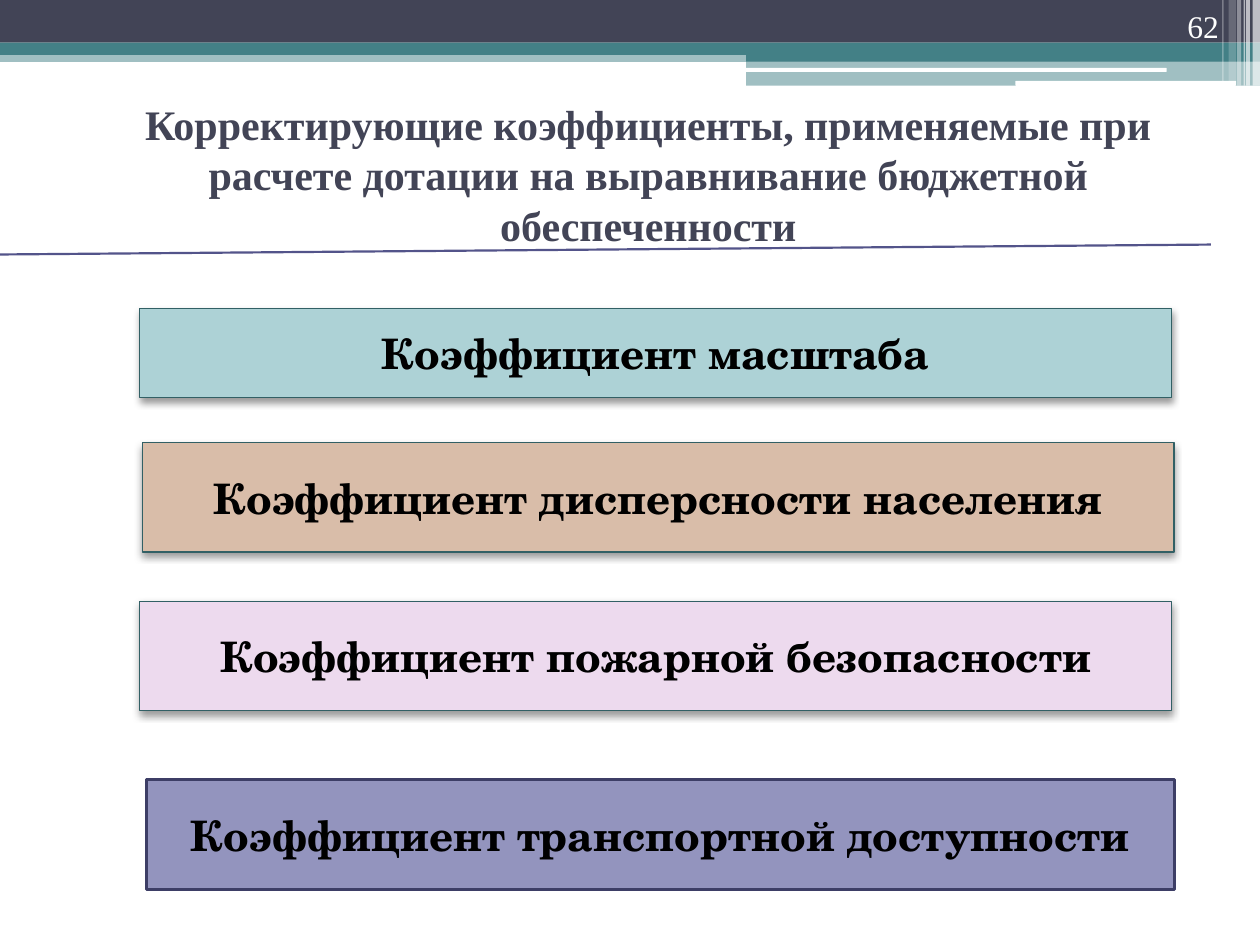
from dataclasses import dataclass

from lxml.etree import SubElement
from pptx import Presentation
from pptx.dml.color import RGBColor
from pptx.enum.shapes import MSO_CONNECTOR, MSO_SHAPE
from pptx.enum.text import MSO_ANCHOR, PP_ALIGN
from pptx.oxml.ns import qn
from pptx.util import Cm, Pt


@dataclass(frozen=True)
class Theme:
    dark: str = "424456"
    teal: str = "438086"
    white: str = "FFFFFF"
    black: str = "000000"
    rule: str = "53548A"
    teal_edge: str = "326065"
    violet_edge: str = "3D3E66"
    aqua: str = "ADD2D6"
    sand: str = "D9BDA9"
    pink: str = "EDDAEE"
    violet: str = "9394BE"
    text_font: str = "Times New Roman"
    box_font: str = "TeX Gyre Schola"
    large: int = 24
    small: int = 18


class SlideBuilder:
    def __init__(self, slide, theme):
        self.slide = slide
        self.theme = theme

    def band(self, left, top, width, height, color, opacity=100, rounded=False):
        kind = MSO_SHAPE.ROUNDED_RECTANGLE if rounded else MSO_SHAPE.RECTANGLE
        shape = self.slide.shapes.add_shape(
            kind, Cm(left), Cm(top), Cm(width), Cm(height))
        shape.shadow.inherit = False
        shape.fill.solid()
        shape.fill.fore_color.rgb = RGBColor.from_string(color)
        shape.line.fill.background()
        if opacity < 100:
            solid_fill = shape._element.spPr.find(qn("a:solidFill"))
            fill_color = solid_fill.find(qn("a:srgbClr"))
            SubElement(fill_color, qn("a:alpha"), val=str(opacity * 1000))
        return shape

    def label(self, shape, text, font, size, color, bold=True,
              align=PP_ALIGN.CENTER, anchor=MSO_ANCHOR.MIDDLE):
        frame = shape.text_frame
        frame.word_wrap = True
        frame.vertical_anchor = anchor
        frame.text = text
        paragraph = frame.paragraphs[0]
        paragraph.alignment = align
        run_font = paragraph.runs[0].font
        run_font.name = font
        run_font.size = Pt(size)
        run_font.bold = bold
        run_font.color.rgb = RGBColor.from_string(color)

    def text(self, left, top, width, height, text, **style):
        box = self.slide.shapes.add_textbox(
            Cm(left), Cm(top), Cm(width), Cm(height))
        self.label(box, text, self.theme.text_font, **style)

    def box(self, left, top, width, height, text, fill, edge, edge_width, shadow):
        shape = self.band(left, top, width, height, fill)
        shape.line.color.rgb = RGBColor.from_string(edge)
        shape.line.width = Pt(edge_width)
        if shadow:
            self.drop_shadow(shape)
        self.label(shape, text, self.theme.box_font, self.theme.large,
                   self.theme.black)

    def drop_shadow(self, shape):
        effects = shape._element.spPr.find(qn("a:effectLst"))
        outer = SubElement(effects, qn("a:outerShdw"), blurRad=str(int(Pt(4.1))),
                           dist=str(int(Pt(2))), dir="5400000", rotWithShape="0")
        color = SubElement(outer, qn("a:srgbClr"), val=self.theme.black)
        SubElement(color, qn("a:alpha"), val="40000")

    def line(self, x1, y1, x2, y2, color, width):
        connector = self.slide.shapes.add_connector(
            MSO_CONNECTOR.STRAIGHT, Cm(x1), Cm(y1), Cm(x2), Cm(y2))
        connector.line.color.rgb = RGBColor.from_string(color)
        connector.line.width = Pt(width)
        SubElement(connector._element.spPr, qn("a:effectLst"))


def main():
    presentation = Presentation()
    presentation.slide_width = Cm(25.4)
    presentation.slide_height = Cm(19.05)
    slide = presentation.slides.add_slide(presentation.slide_layouts[6])
    theme = Theme()
    builder = SlideBuilder(slide, theme)

    # Header bands
    builder.band(0, 1.02, 25.4, 0.23, theme.teal, 50)
    builder.band(0, 0, 25.4, 0.86, theme.dark)
    builder.band(0, 0.86, 25.4, 0.25, theme.teal)
    builder.band(15.04, 0.99, 10.36, 0.25, theme.teal)
    builder.band(15.04, 1.22, 10.36, 0.51, theme.teal, 50)
    builder.band(15.01, 1.37, 8.51, 0.08, theme.white, rounded=True)
    builder.band(20.47, 1.63, 4.45, 0.1, theme.white, rounded=True)

    # Vertical stripes at the right edge: left, width, height, opacity
    for left, width, height, opacity in (
            (25.25, 0.15, 1.73, 65), (25.12, 0.08, 1.73, 65),
            (25.07, 0.03, 1.73, 60), (24.94, 0.08, 1.73, 40),
            (24.77, 0.15, 1.63, 20), (24.64, 0.03, 1.63, 30)):
        builder.band(left, 0, width, height, theme.white, opacity)

    # Title, rule and slide number
    builder.text(2.67, 1.32, 20.8, 4.37,
                 "Корректирующие коэффициенты, применяемые при расчете "
                 "дотации на выравнивание бюджетной обеспеченности",
                 size=theme.large, color=theme.dark)
    builder.line(0, 5.13, 24.41, 4.93, theme.rule, 1.25)
    builder.text(22.71, 0, 2.11, 1.02, "62", size=theme.small,
                 color=theme.white, bold=False, align=PP_ALIGN.RIGHT,
                 anchor=MSO_ANCHOR.BOTTOM)

    # Coefficient boxes
    teal_style = (theme.teal_edge, 0.75, True)
    violet_style = (theme.violet_edge, 1.5, False)
    for left, top, width, height, name, fill, style in (
            (2.82, 6.22, 20.8, 1.8, "масштаба", theme.aqua, teal_style),
            (2.87, 8.92, 20.8, 2.21, "дисперсности населения",
             theme.sand, teal_style),
            (2.82, 12.12, 20.8, 2.21, "пожарной безопасности",
             theme.pink, teal_style),
            (2.95, 15.72, 20.73, 2.21, "транспортной доступности",
             theme.violet, violet_style)):
        builder.box(left, top, width, height, f"Коэффициент {name}", fill, *style)

    presentation.save("out.pptx")


if __name__ == "__main__":
    main()
